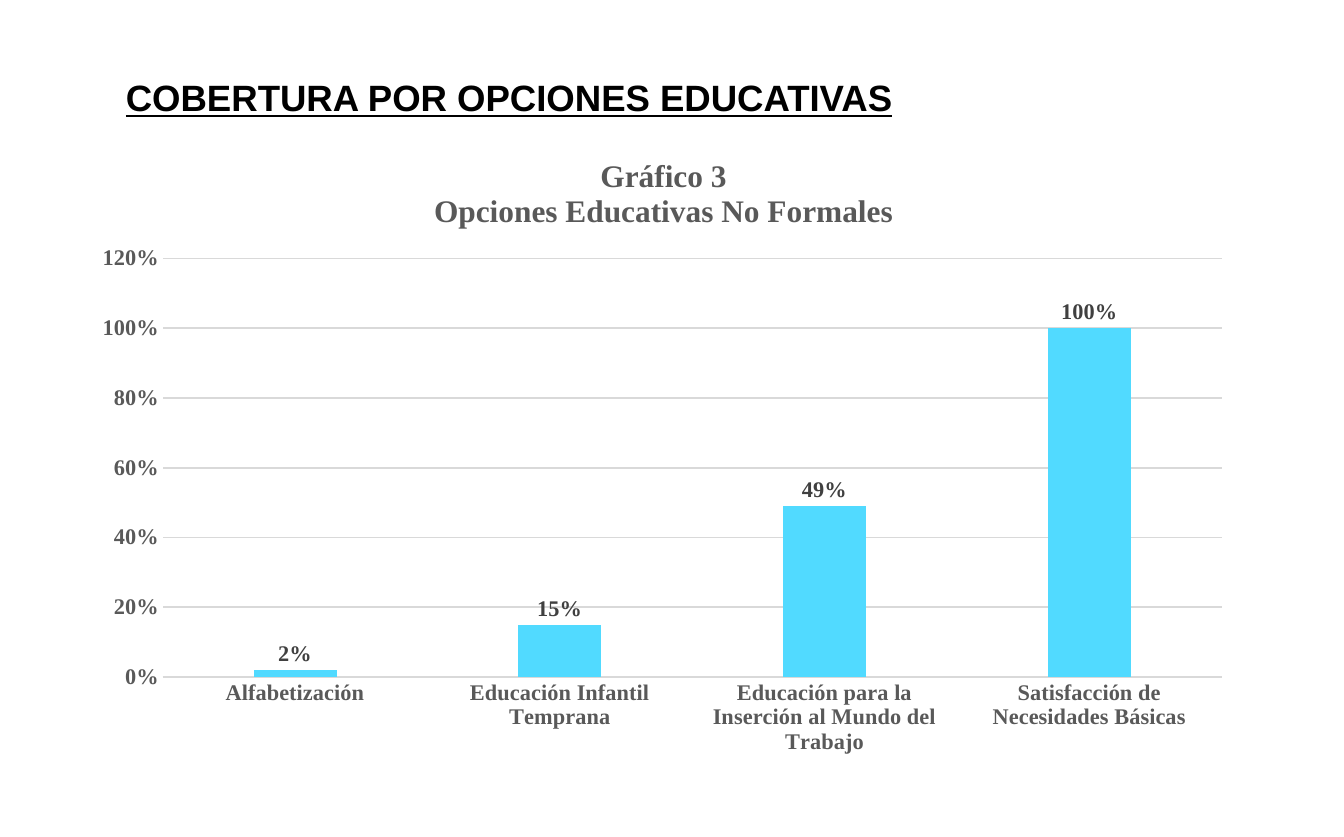
"""Builds the slide on coverage of non-formal education options."""
from lxml import etree
from pptx import Presentation
from pptx import util as u
from pptx.chart.data import CategoryChartData
from pptx.dml.color import RGBColor
from pptx.enum import chart as ch, text as tx
from pptx.oxml.ns import qn

HEADING = "COBERTURA POR OPCIONES EDUCATIVAS"
CHART_TITLE = "Gráfico 3\nOpciones Educativas No Formales"
COVERAGE = {
    "Alfabetización": 0.02,
    "Educación Infantil Temprana": 0.15,
    "Educación para la Inserción al Mundo del Trabajo": 0.49,
    "Satisfacción de Necesidades Básicas": 1,
}
SLIDE_SIZE = (14.29, 8.9)
HEADING_BOX = (1.24, 0.75, 9.76, 0.57)
CHART_BOX = (0.85, 1.45, 12.41, 6.7)
PLOT_BOX = (1.73, 2.75, 11.26, 4.45)
THEME = {
    "heading_font": "Arial", "chart_font": "Times New Roman",
    "heading": "000000", "muted": "595959", "value": "404040",
    "bar": "51DAFF", "grid": "D9D9D9",
    "heading_size": 28, "title_size": 24, "label_size": 17.1, "line": 1.43,
}


def style(font, color, size, face=THEME["chart_font"], underline=None):
    font.name, font.size, font.bold = face, u.Pt(size), True
    font.color.rgb = RGBColor.from_string(color)
    if underline:
        font.underline = True


def write(frame, text, align=tx.PP_ALIGN.LEFT, **look):
    frame.text = text
    for paragraph in frame.paragraphs:
        paragraph.alignment = align
        for run in paragraph.runs:
            style(run.font, **look)


def rule(line):
    line.color.rgb = RGBColor.from_string(THEME["grid"])
    line.width = u.Pt(THEME["line"])


def place_plot(chart):
    left, top, width, height = CHART_BOX
    x, y, w, h = PLOT_BOX
    plot_area = chart.plots[0]._element.getparent()
    for old in plot_area.findall(qn("c:layout")):
        plot_area.remove(old)
    layout = etree.Element(qn("c:layout"))
    manual = etree.SubElement(layout, qn("c:manualLayout"))
    settings = {
        "layoutTarget": "inner", "xMode": "edge", "yMode": "edge",
        "x": (x - left) / width, "y": (y - top) / height,
        "w": w / width, "h": h / height,
    }
    for tag, value in settings.items():
        etree.SubElement(manual, qn(f"c:{tag}")).set("val", str(value))
    plot_area.insert(0, layout)


def add_coverage_chart(slide):
    coverage = CategoryChartData(number_format="0%")
    coverage.categories = list(COVERAGE)
    coverage.add_series("Series 1", list(COVERAGE.values()))
    chart = slide.shapes.add_chart(
        ch.XL_CHART_TYPE.COLUMN_CLUSTERED, *map(u.Inches, CHART_BOX), coverage
    ).chart
    chart.font.name, chart.font.size = THEME["chart_font"], u.Pt(10)
    chart.has_legend = False
    chart.has_title = True
    write(chart.chart_title.text_frame, CHART_TITLE, align=tx.PP_ALIGN.CENTER,
          color=THEME["muted"], size=THEME["title_size"])
    chart.chart_title.include_in_layout = False

    options, percent = chart.category_axis, chart.value_axis
    for axis in (options, percent):
        axis.major_tick_mark = axis.minor_tick_mark = ch.XL_TICK_MARK.NONE
        style(axis.tick_labels.font, THEME["muted"], THEME["label_size"])
    rule(options.format.line)
    percent.format.line.fill.background()
    rule(percent.major_gridlines.format.line)
    percent.minimum_scale, percent.maximum_scale, percent.major_unit = 0, 1.2, 0.2
    percent.tick_labels.number_format = "0%"
    percent.tick_labels.number_format_is_linked = False

    bars = chart.plots[0]
    bars.vary_by_categories = False
    bars.gap_width, bars.overlap = 219, -27
    fill = bars.series[0].format.fill
    fill.solid()
    fill.fore_color.rgb = RGBColor.from_string(THEME["bar"])
    values = bars.series[0].data_labels
    values.show_value = True
    values.position = ch.XL_LABEL_POSITION.OUTSIDE_END
    values.number_format, values.number_format_is_linked = "0%", False
    style(values.font, THEME["value"], THEME["label_size"])
    place_plot(chart)


def main():
    deck = Presentation()
    deck.slide_width, deck.slide_height = map(u.Inches, SLIDE_SIZE)
    slide = deck.slides.add_slide(deck.slide_layouts[6])
    add_coverage_chart(slide)
    heading = slide.shapes.add_textbox(*map(u.Inches, HEADING_BOX)).text_frame
    heading.word_wrap = True
    heading.auto_size = tx.MSO_AUTO_SIZE.SHAPE_TO_FIT_TEXT
    write(heading, HEADING, color=THEME["heading"], size=THEME["heading_size"],
          face=THEME["heading_font"], underline=True)
    deck.save("out.pptx")


if __name__ == "__main__":
    main()
